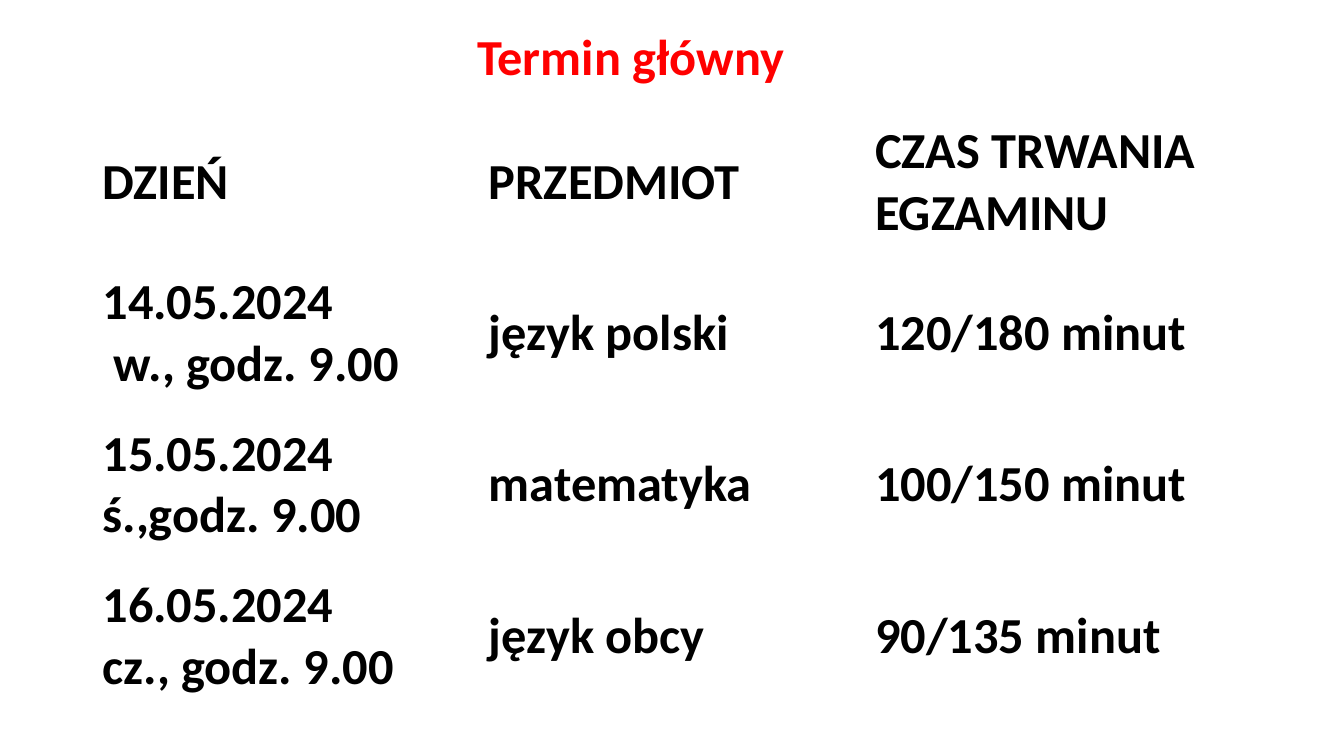
from pptx import Presentation
from pptx.dml.color import RGBColor
from pptx.enum.text import MSO_ANCHOR, MSO_AUTO_SIZE, PP_ALIGN
from pptx.util import Cm, Pt

MIDDLE = MSO_ANCHOR.MIDDLE
FIXED = MSO_AUTO_SIZE.NONE
CENTER = PP_ALIGN.CENTER
TITLE_ONLY = 5

EXAMS = [
    ("DZIEŃ", "PRZEDMIOT", "CZAS TRWANIA EGZAMINU"),
    ("14.05.2024\n w., godz. 9.00", "język polski", "120/180 minut"),
    ("15.05.2024\nś.,godz. 9.00", "matematyka", "100/150 minut"),
    ("16.05.2024\ncz., godz. 9.00", "język obcy", "90/135 minut"),
]


def color(code):
    return RGBColor.from_string(code)


class Page:
    font = "Calibri"
    size = Pt(36)
    ink = "000000"
    accent = "FF0000"
    paper = "FFFFFF"

    def __init__(self, deck):
        self.slide = deck.slides.add_slide(deck.slide_layouts[TITLE_ONLY])

    def style(self, frame, code):
        for para in frame.paragraphs:
            for run in para.runs:
                run.font.name = self.font
                run.font.size = self.size
                run.font.bold = True
                run.font.color.rgb = color(code)

    def title(self, text, left, top, width, height):
        shape = self.slide.shapes.title
        shape.left, shape.top = Cm(left), Cm(top)
        shape.width, shape.height = Cm(width), Cm(height)
        frame = shape.text_frame
        frame.text = text
        frame.word_wrap = False
        frame.auto_size = FIXED
        frame.vertical_anchor = MIDDLE
        frame.paragraphs[0].alignment = CENTER
        self.style(frame, self.accent)

    def table(self, rows, left, top, width, height):
        table = self.slide.shapes.add_table(
            len(rows), len(rows[0]), Cm(left), Cm(top), Cm(width), Cm(height)
        ).table
        table.first_row = table.horz_banding = False
        for r, row in enumerate(rows):
            for c, text in enumerate(row):
                cell = table.cell(r, c)
                cell.fill.solid()
                cell.fill.fore_color.rgb = color(self.paper)
                cell.vertical_anchor = MIDDLE
                cell.text_frame.text = text
                self.style(cell.text_frame, self.ink)


def main():
    deck = Presentation()
    deck.slide_width, deck.slide_height = Cm(33.87), Cm(19.05)
    page = Page(deck)
    page.title("Termin główny", 11.73, 0.5, 8.33, 1.8)
    page.table(EXAMS, 2.33, 2.69, 29.21, 15.24)
    deck.save("out.pptx")


if __name__ == "__main__":
    main()
